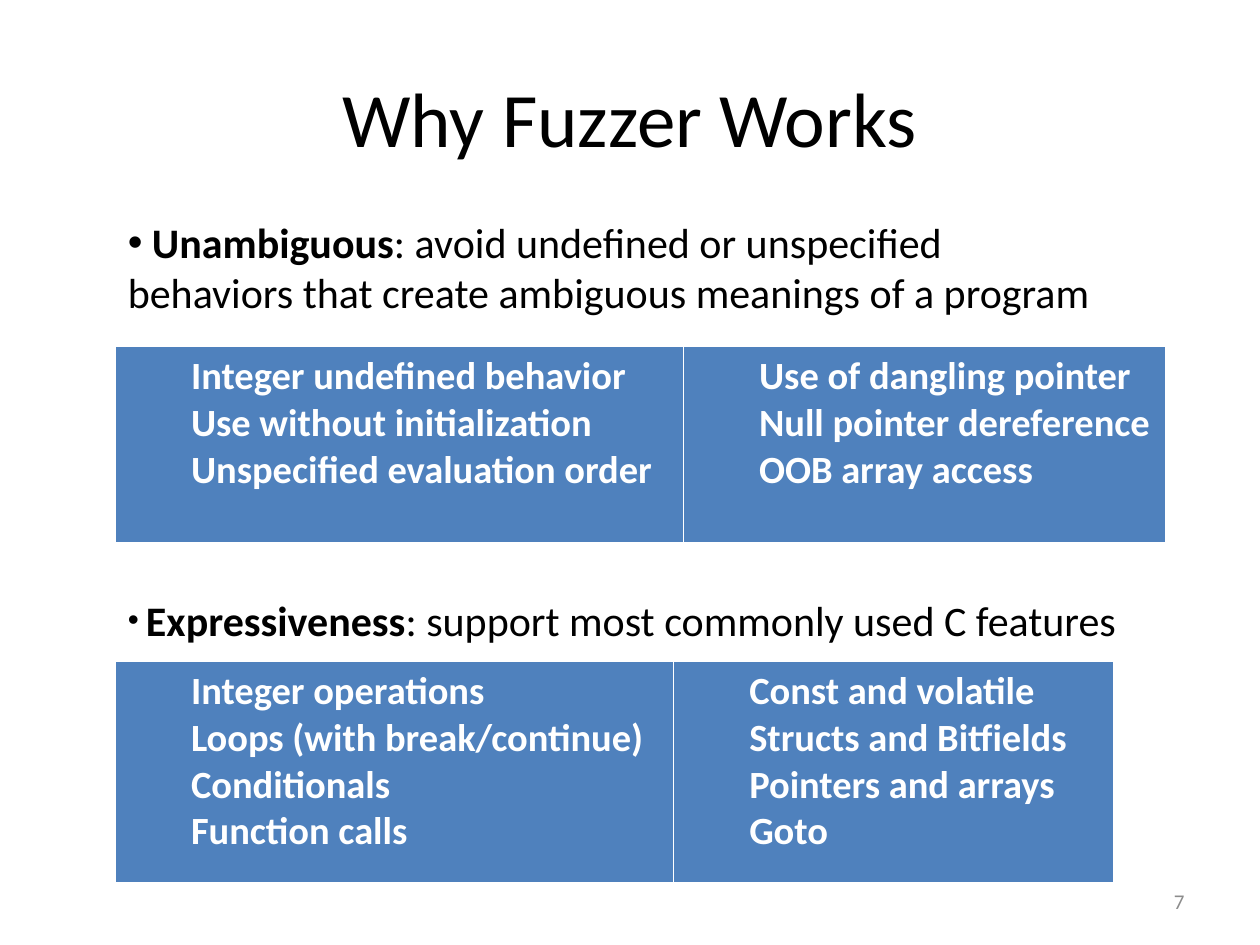
from dataclasses import dataclass

from lxml.etree import SubElement
from pptx import Presentation
from pptx.dml.color import RGBColor
from pptx.enum.text import MSO_ANCHOR, PP_ALIGN
from pptx.oxml.ns import qn
from pptx.slide import Slide
from pptx.util import Pt

FONT = "Calibri"
BLACK, WHITE, GRAY, BLUE = "000000", "FFFFFF", "8C8C8C", "4F81BD"
LEFT = 66
CELL_INDENT = 36
BORDER_WIDTHS = {"a:lnL": 1, "a:lnR": 1, "a:lnT": 1, "a:lnB": 3}


@dataclass(frozen=True)
class Piece:
    text: str
    size: float
    bold: bool = False
    color: str = BLACK


@dataclass(frozen=True)
class Caption:
    """A one-paragraph text box."""
    box: tuple[float, float, float, float]
    pieces: tuple[Piece, ...]
    align: PP_ALIGN = PP_ALIGN.LEFT
    anchor: MSO_ANCHOR = MSO_ANCHOR.TOP
    bullet: bool = False


@dataclass(frozen=True)
class FeatureTable:
    """A one-row table; each column is a list of lines."""
    top: float
    height: float
    widths: tuple[float, ...]
    columns: tuple[tuple[str, ...], ...]


CAPTIONS = (
    Caption((36, 21.6, 648, 90), (Piece("Why Fuzzer Works", 44),),
            PP_ALIGN.CENTER, MSO_ANCHOR.MIDDLE),
    Caption((LEFT, 120.2, 576, 65.5),
            (Piece(" Unambiguous", 24, True),
             Piece(": avoid undefined or unspecified behaviors that create "
                   "ambiguous meanings of a program", 24)), bullet=True),
    Caption((LEFT, 336.2, 588, 36),
            (Piece(" ", 18), Piece("Expressiveness", 24, True),
             Piece(": support most commonly used C features", 24)), bullet=True),
    Caption((516, 500.4, 168, 28.8), (Piece("7", 12, color=GRAY),),
            PP_ALIGN.RIGHT, MSO_ANCHOR.MIDDLE),
)

TABLES = (
    FeatureTable(198, 112.8, (324.6, 275.4), (
        ("Integer undefined behavior", "Use without initialization",
         "Unspecified evaluation order"),
        ("Use of dangling pointer", "Null pointer dereference",
         "OOB array access"))),
    FeatureTable(378, 127.2, (319, 251.2), (
        ("Integer operations", "Loops (with break/continue)",
         "Conditionals", "Function calls"),
        ("Const and volatile", "Structs and Bitfields",
         "Pointers and arrays", "Goto"))),
)


def rgb(color: str) -> RGBColor:
    return RGBColor.from_string(color)


def add_piece(paragraph, piece: Piece) -> None:
    run = paragraph.add_run()
    run.text = piece.text
    font_format = {"name": FONT, "size": Pt(piece.size), "bold": piece.bold}
    for attribute, value in font_format.items():
        setattr(run.font, attribute, value)
    run.font.color.rgb = rgb(piece.color)


def add_bullet(paragraph) -> None:
    properties = paragraph._p.get_or_add_pPr()
    SubElement(properties, qn("a:buFont"), typeface="Arial")
    SubElement(properties, qn("a:buChar"), char="•")


def draw_caption(slide: Slide, caption: Caption) -> None:
    frame = slide.shapes.add_textbox(*map(Pt, caption.box)).text_frame
    frame.word_wrap = True
    frame.vertical_anchor = caption.anchor
    paragraph = frame.paragraphs[0]
    paragraph.alignment = caption.align
    if caption.bullet:
        add_bullet(paragraph)
    for piece in caption.pieces:
        add_piece(paragraph, piece)


def add_borders(cell) -> None:
    properties = cell._tc.get_or_add_tcPr()
    for side, width in BORDER_WIDTHS.items():
        line = SubElement(properties, qn(side), w=str(Pt(width)))
        fill = SubElement(line, qn("a:solidFill"))
        SubElement(fill, qn("a:srgbClr"), val=WHITE)


def fill_cell(cell, lines: tuple[str, ...]) -> None:
    add_borders(cell)
    cell.fill.solid()
    cell.fill.fore_color.rgb = rgb(BLUE)
    frame = cell.text_frame
    for index, line in enumerate(lines):
        paragraph = frame.add_paragraph() if index else frame.paragraphs[0]
        paragraph.level = 1
        properties = paragraph._p.get_or_add_pPr()
        properties.set("marL", str(Pt(CELL_INDENT)))
        properties.set("indent", "0")
        add_piece(paragraph, Piece(line, 22, True, WHITE))


def draw_table(slide: Slide, features: FeatureTable) -> None:
    table = slide.shapes.add_table(
        1, len(features.columns), Pt(LEFT), Pt(features.top),
        Pt(sum(features.widths)), Pt(features.height)).table
    table.first_row = table.horz_banding = False
    for index, (width, lines) in enumerate(zip(features.widths, features.columns)):
        table.columns[index].width = Pt(width)
        fill_cell(table.cell(0, index), lines)


def main() -> None:
    presentation = Presentation()
    presentation.slide_width, presentation.slide_height = Pt(720), Pt(540)
    slide = presentation.slides.add_slide(presentation.slide_layouts[6])
    for caption in CAPTIONS:
        draw_caption(slide, caption)
    for features in TABLES:
        draw_table(slide, features)
    presentation.save("out.pptx")


if __name__ == "__main__":
    main()
